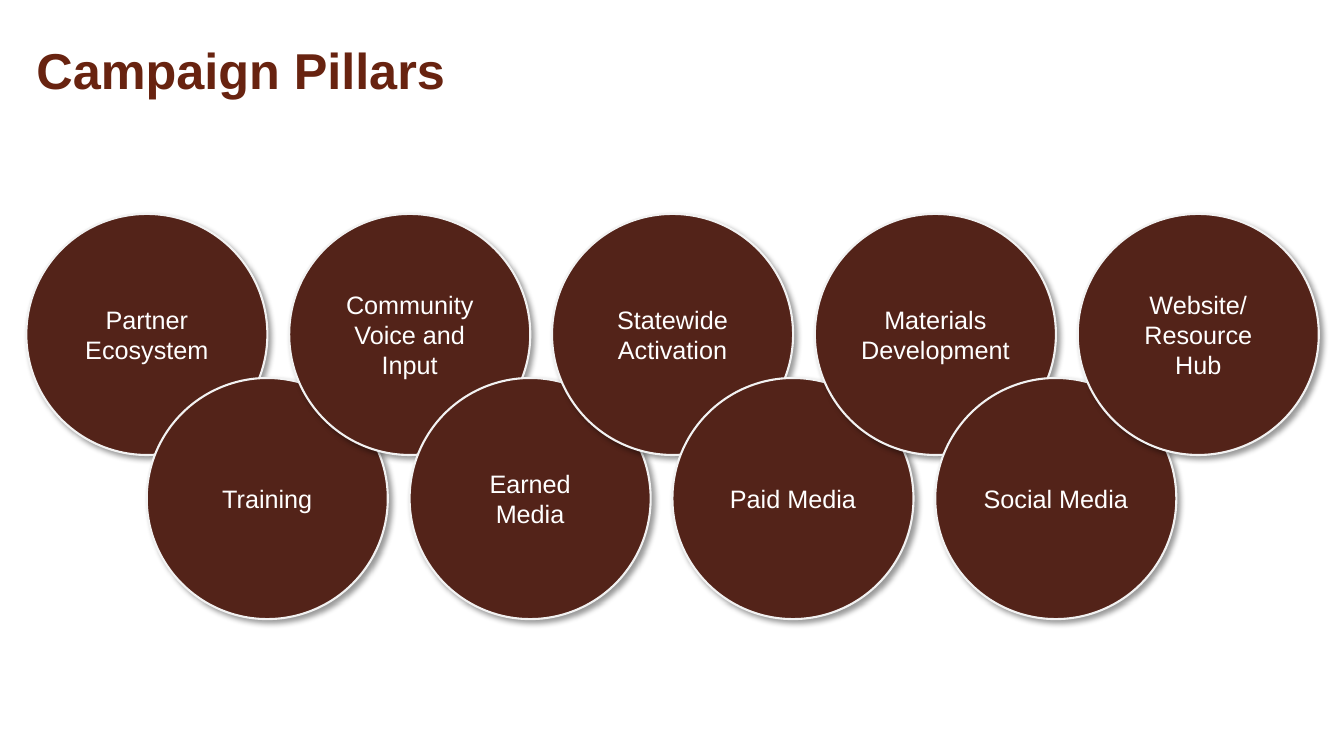
import pptx
import pptx.util
import pptx.oxml
import pptx.oxml.ns
from pptx.dml.color import RGBColor
from pptx.enum.shapes import MSO_SHAPE
from pptx.enum.text import MSO_ANCHOR, PP_ALIGN

Pt = pptx.util.Pt

TITLE_RED = RGBColor(0x68, 0x23, 0x10)
MAROON = RGBColor(0x53, 0x23, 0x19)
PALE_GREY = RGBColor(0xF2, 0xF2, 0xF2)
WHITE = RGBColor(0xFF, 0xFF, 0xFF)

# Alternating upper and lower circles, from left to right
PILLARS = [
    "Partner Ecosystem",
    "Training",
    "Community Voice and Input",
    "Earned Media",
    "Statewide Activation",
    "Paid Media",
    "Materials Development",
    "Social Media",
    "Website/\nResource Hub",
]
DIAMETER = 172.2
LEFT = 18.8
PITCH = 187.75
LOWER_SHIFT = 86
UPPER_TOP, LOWER_TOP = 152.8, 270

SHADOW = (
    '<a:effectLst %s><a:outerShdw blurRad="%d" dist="%d" dir="2700000" algn="tl" '
    'rotWithShape="0"><a:srgbClr val="000000"><a:alpha val="40000"/></a:srgbClr>'
    "</a:outerShdw></a:effectLst>"
) % (pptx.oxml.ns.nsdecls("a"), Pt(4), Pt(3))


class Deck:
    font = "Arial"

    def __init__(self, width, height):
        self.prs = pptx.Presentation()
        self.prs.slide_width, self.prs.slide_height = Pt(width), Pt(height)
        self.s = self.prs.slides.add_slide(self.prs.slide_layouts[5])

    def style(self, p, size, color, align, bold=False):
        p.alignment = align
        p.font.name = self.font
        p.font.size = Pt(size)
        p.font.bold = bold
        p.font.color.rgb = color

    def title(self, text, x, y, w, h):
        sp = self.s.shapes.title
        sp.left, sp.top, sp.width, sp.height = Pt(x), Pt(y), Pt(w), Pt(h)
        tf = sp.text_frame
        tf.text = text
        tf.vertical_anchor = MSO_ANCHOR.MIDDLE
        p = tf.paragraphs[0]
        p.line_spacing = 0.9
        self.style(p, 36, TITLE_RED, PP_ALIGN.LEFT, bold=True)

    def circle(self, text, x, y, diameter):
        sp = self.s.shapes.add_shape(
            MSO_SHAPE.OVAL, Pt(x), Pt(y), Pt(diameter), Pt(diameter))
        sp.fill.solid()
        sp.fill.fore_color.rgb = MAROON
        sp.line.color.rgb = PALE_GREY
        sp.line.width = Pt(1.5)
        sp._element.spPr.append(pptx.oxml.parse_xml(SHADOW))
        tf = sp.text_frame
        tf.word_wrap = True
        tf.vertical_anchor = MSO_ANCHOR.MIDDLE
        tf.text = text
        for p in tf.paragraphs:
            self.style(p, 18, WHITE, PP_ALIGN.CENTER)


def main():
    deck = Deck(960, 540)
    deck.title("Campaign Pillars", 18.8, 0, 908, 104.4)
    for i, pillar in enumerate(PILLARS):
        column, lower = divmod(i, 2)
        x = LEFT + column * PITCH + lower * LOWER_SHIFT
        deck.circle(pillar, x, LOWER_TOP if lower else UPPER_TOP, DIAMETER)
    deck.prs.save("out.pptx")


if __name__ == "__main__":
    main()
